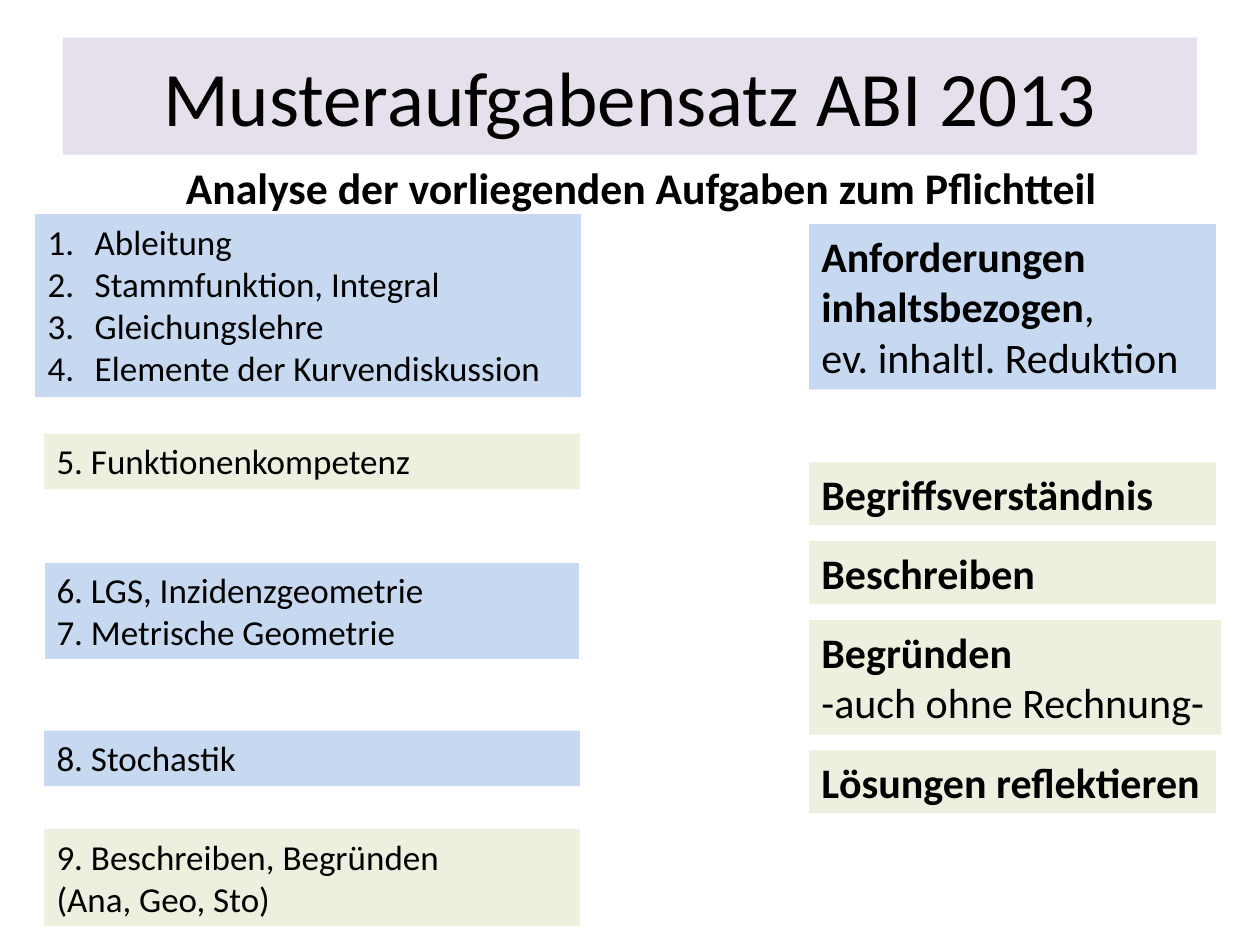
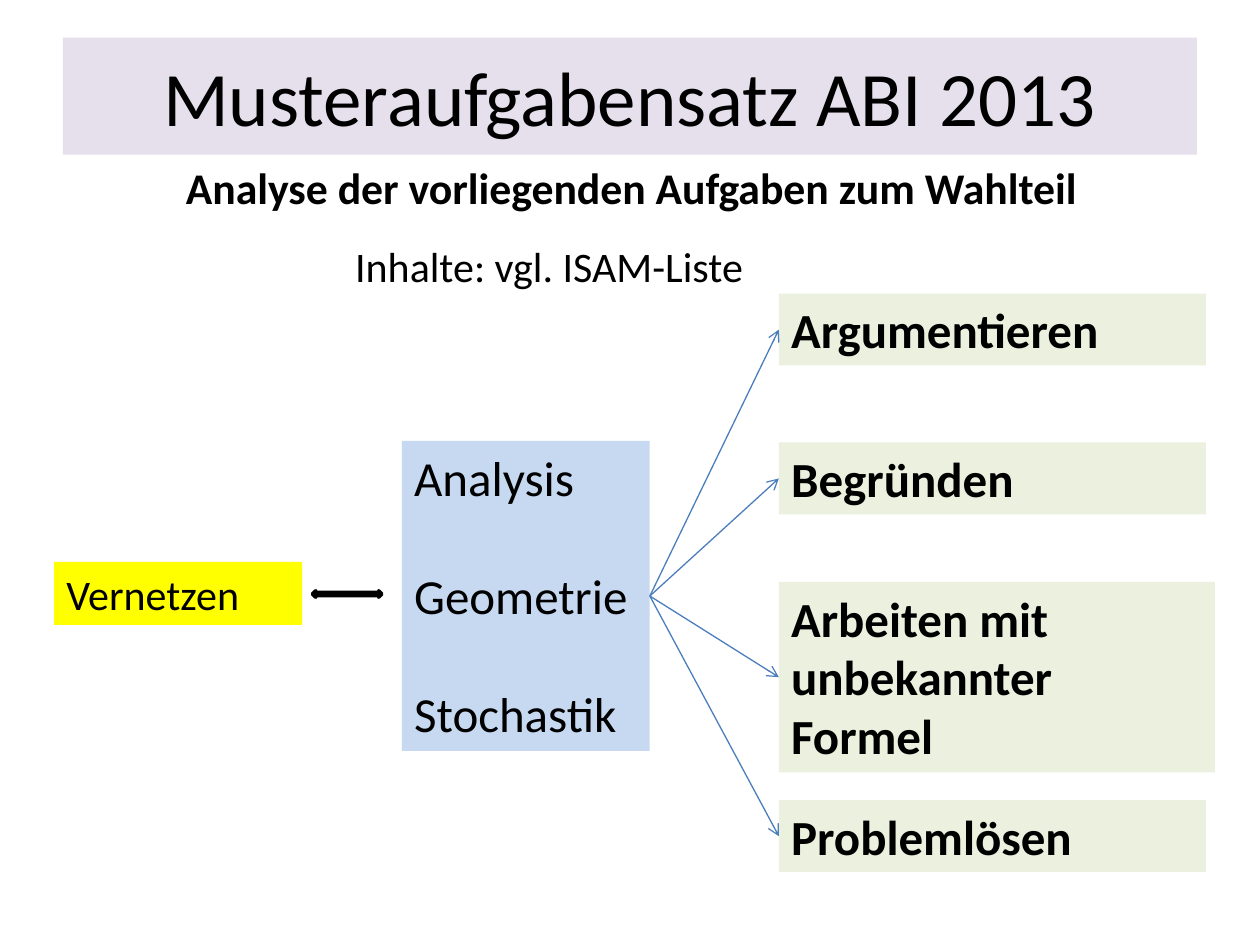
from dataclasses import dataclass

from lxml import etree
from pptx import Presentation
from pptx import util as u
from pptx.dml.color import RGBColor
from pptx.enum import shapes, text
from pptx.oxml import ns

LILAC = RGBColor(0xE6, 0xE0, 0xEC)
BLUE = RGBColor(0xC6, 0xD9, 0xF1)
GREEN = RGBColor(0xEB, 0xF1, 0xDE)
YELLOW = RGBColor(0xFF, 0xFF, 0x00)
WHITE = RGBColor(0xFF, 0xFF, 0xFF)
BLACK = RGBColor(0x00, 0x00, 0x00)
ARROW_BLUE = RGBColor(0x4B, 0x7E, 0xBC)
DOUBLE_ARROW_BLUE = RGBColor(0x4F, 0x81, 0xBD)
FONT = "Calibri"


@dataclass
class Box:
    left: float
    top: float
    width: float
    height: float

    def inner(self, left, top, width, height):
        return Box(self.left + left, self.top + top, width, height)

    def lengths(self):
        return [u.Cm(n) for n in (self.left, self.top, self.width, self.height)]


TITLE = Box(1.27, 0.76, 22.86, 2.36)
SUBTITLE = Box(3.5, 3.12, 19.4, 1.32)
CONTENTS = Box(0.89, 4.32, 10.8, 14.35)
DEMANDS = Box(16.31, 4.52, 8.2, 11.87)
ISAM_NOTE = Box(6.91, 4.72, 9.2, 1.27)
NETWORKING = Box(1.09, 11.33, 6.61, 1.27)
TOPICS = Box(8.1, 8.89, 5, 6.25)
GOALS = Box(15.7, 5.92, 8.61, 11.66)


def style_span(span, size, bold=False):
    span.font.name = FONT
    span.font.size = u.Pt(size)
    span.font.bold = bold
    span.font.color.rgb = BLACK


def write(shape, lines, size, bold=False, align=text.PP_ALIGN.LEFT):
    frame = shape.text_frame
    frame.word_wrap = True
    frame.vertical_anchor = text.MSO_ANCHOR.TOP
    for index, line in enumerate(lines):
        para = frame.add_paragraph() if index else frame.paragraphs[0]
        para.text = line
        para.alignment = align
        for span in para.runs:
            style_span(span, size, bold)


def add_text(page, box, line, size, bold=False):
    write(page.shapes.add_textbox(*box.lengths()), [line], size, bold)


def add_panel(page, box, fill, kind=shapes.MSO_SHAPE.RECTANGLE):
    panel = page.shapes.add_shape(kind, *box.lengths())
    panel.shadow.inherit = False
    panel.fill.solid()
    panel.fill.fore_color.rgb = fill
    panel.line.fill.background()
    return panel


def add_label(page, box, fill, lines, size, bold=False):
    label = add_panel(page, box, fill)
    write(label, lines, size, bold)
    return label


def number_paragraphs(frame):
    for para in frame.paragraphs:
        props = para._p.get_or_add_pPr()
        props.set("marL", str(u.Cm(0.95)))
        props.set("indent", str(-u.Cm(0.95)))
        etree.SubElement(props, ns.qn("a:buFont"), typeface="+mj-lt")
        etree.SubElement(props, ns.qn("a:buAutoNum"), type="arabicPeriod")


def add_arrow(page, source, target):
    arrow = page.shapes.add_connector(shapes.MSO_CONNECTOR.STRAIGHT, 0, 0, 0, 0)
    arrow.begin_connect(source, 3)
    arrow.end_connect(target, 1)
    arrow.line.color.rgb = ARROW_BLUE
    arrow.line.width = u.Pt(0.75)
    etree.SubElement(arrow.line._get_or_add_ln(), ns.qn("a:tailEnd"), type="arrow")
    etree.SubElement(arrow._element.spPr, ns.qn("a:effectLst"))


def add_page(deck, subtitle):
    page = deck.slides.add_slide(deck.slide_layouts[6])
    title = add_panel(page, TITLE, LILAC)
    write(title, ["Musteraufgabensatz ABI 2013"], 44, align=text.PP_ALIGN.CENTER)
    title.text_frame.vertical_anchor = text.MSO_ANCHOR.MIDDLE
    add_text(page, SUBTITLE, subtitle, 25, True)
    return page


def draw_contents(page, box):
    basics = add_label(page, box.inner(-0.18, 0, 11, 3.68), BLUE, [
        "Ableitung", "Stammfunktion, Integral", "Gleichungslehre",
        "Elemente der Kurvendiskussion"], 20)
    number_paragraphs(basics.text_frame)
    add_label(page, box.inner(0, 4.42, box.width, 1.12), GREEN,
              ["5. Funktionenkompetenz"], 20)
    geometry = add_label(page, box.inner(0, 7.01, box.width, 1.96), BLUE,
                         ["6. LGS, Inzidenzgeometrie", "7. Metrische Geometrie"], 20)
    geometry.line.color.rgb = WHITE
    geometry.line.width = u.Pt(0.75)
    add_label(page, box.inner(0, 10.41, box.width, 1.12), BLUE, ["8. Stochastik"], 20)
    add_label(page, box.inner(0, 12.39, box.width, 1.96), GREEN,
              ["9. Beschreiben, Begründen\n(Ana, Geo, Sto)"], 20)


def draw_demands(page, box):
    heading = add_label(page, box.inner(0, 0, box.width, 3.33), BLUE,
                        ["Anforderungen\ninhaltsbezogen"], 24, True)
    para = heading.text_frame.paragraphs[0]
    style_span_after(para, ",")
    para.add_line_break()
    style_span_after(para, "ev. inhaltl. Reduktion")

    skills = [
        (["Begriffsverständnis"], box.width, 1.27),
        (["Beschreiben"], box.width, 1.27),
        (["Begründen", "-auch ohne Rechnung-"], 8.31, 2.31),
        (["Lösungen reflektieren"], box.width, 1.27),
    ]
    top = 4.8
    for lines, width, height in skills:
        skill = add_label(page, box.inner(0, top, width, height), GREEN, lines, 24, True)
        for remark in skill.text_frame.paragraphs[1:]:
            remark.runs[0].font.bold = False
        top += height + 0.32


def style_span_after(para, words):
    span = para.add_run()
    span.text = words
    style_span(span, 24)


def draw_networking(page, box):
    add_label(page, box.inner(0, 0, 5, box.height), YELLOW, ["Vernetzen"], 24)
    arrow = add_panel(page, box.inner(5.21, 0.58, 1.4, 0.13), DOUBLE_ARROW_BLUE,
                      shapes.MSO_SHAPE.LEFT_RIGHT_ARROW)
    arrow.line.color.rgb = BLACK
    arrow.line.width = u.Pt(2)


def draw_topics(page, box):
    topics = add_label(page, box, BLUE, ["Analysis", "Geometrie", "Stochastik"], 28)
    for para in topics.text_frame.paragraphs[1:]:
        para.space_before = u.Pt(34)
    return topics


def draw_goals(page, box, topics):
    goals = [
        ("Argumentieren", 0, box.width, 1.45),
        ("Begründen", 3, box.width, 1.45),
        ("Arbeiten mit unbekannter Formel", 5.81, 8.79, 3.84),
        ("Problemlösen", 10.21, box.width, 1.45),
    ]
    for name, top, width, height in goals:
        goal = add_label(page, box.inner(0, top, width, height), GREEN, [name], 28, True)
        add_arrow(page, topics, goal)


def build_compulsory_part(deck):
    page = add_page(deck, "Analyse der vorliegenden Aufgaben zum Pflichtteil")
    draw_contents(page, CONTENTS)
    draw_demands(page, DEMANDS)


def build_elective_part(deck):
    page = add_page(deck, "Analyse der vorliegenden Aufgaben zum Wahlteil")
    add_text(page, ISAM_NOTE, "Inhalte: vgl. ISAM-Liste", 24)
    draw_networking(page, NETWORKING)
    topics = draw_topics(page, TOPICS)
    draw_goals(page, GOALS, topics)


def main():
    deck = Presentation()
    deck.slide_width = u.Cm(25.4)
    deck.slide_height = u.Cm(19.05)
    build_compulsory_part(deck)
    build_elective_part(deck)
    deck.save("out.pptx")


if __name__ == "__main__":
    main()
